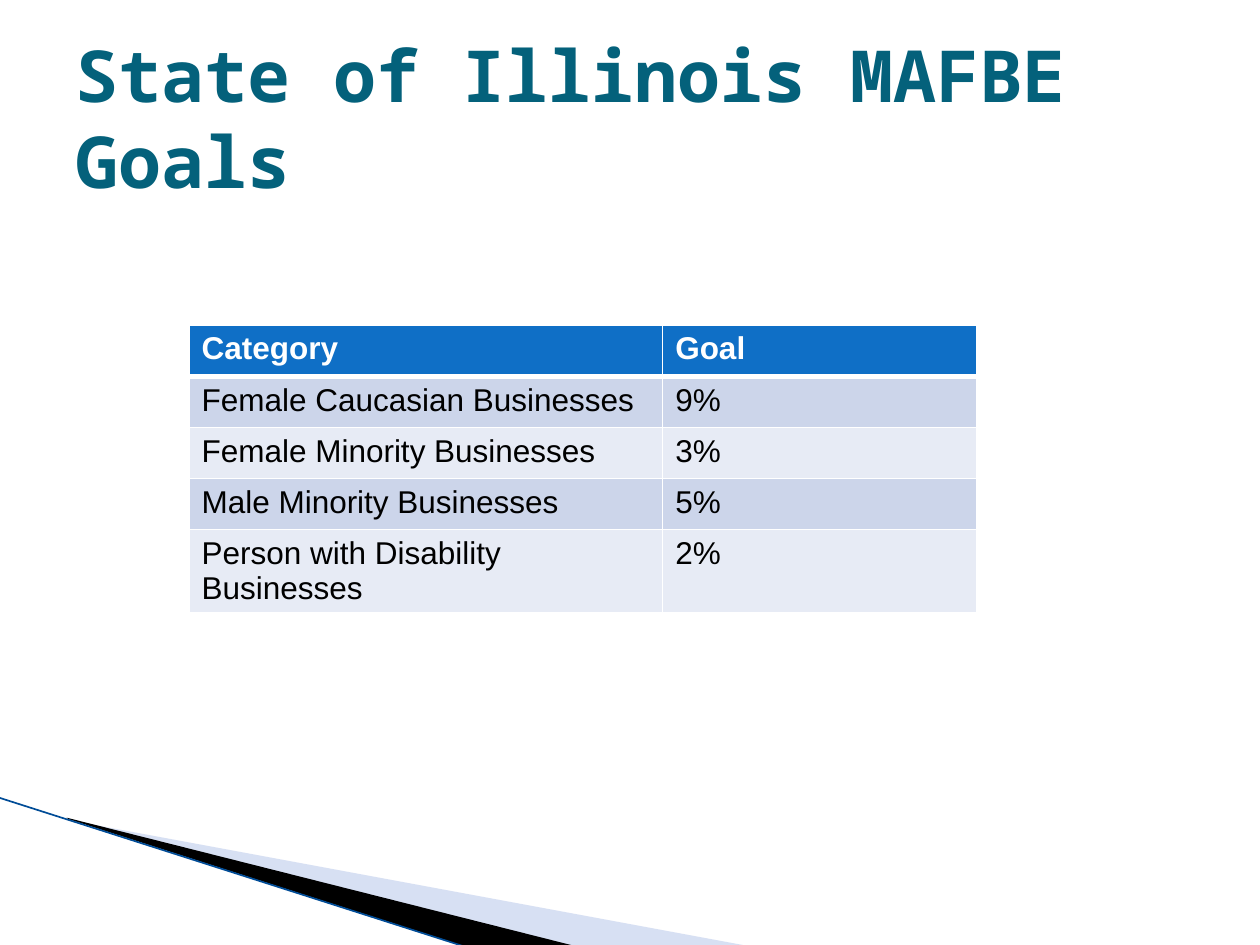
"""Build the State of Illinois MAFBE goals slide."""
from lxml import etree
from pptx import Presentation
from pptx import util as u
from pptx.dml.color import RGBColor
from pptx.enum import shapes, text
from pptx.oxml.ns import qn

TITLE = "State of Illinois MAFBE Goals"
ROWS = [
    ("Category", "Goal"),
    ("Female Caucasian Businesses", "9%"),
    ("Female Minority Businesses", "3%"),
    ("Male Minority Businesses", "5%"),
    ("Person with Disability Businesses", "2%"),
]
COL_WIDTHS = (3.76, 2.49)
TABLE_HEIGHT = 2.03
COLORS = {
    "title": "04617B", "header": "0F6FC6", "odd": "CCD5EA", "even": "E7EBF5",
    "white": "FFFFFF", "black": "000000", "wedge": "9DB2E1", "edge": "004C97",
}
WEDGES = [
    ([(0.55, 6.51), (5.95, 7.51), (4.56, 7.51), (0.55, 6.5)], "wedge", 40),
    ([(0.53, 6.49), (4.57, 7.51), (3.72, 7.52), (0.54, 6.5)], "black", 100),
]
EDGE = [(-0.01, 6.33), (3.71, 7.52)]


def rgb(name):
    return RGBColor.from_string(COLORS[name])


def write(tf, content, *, font="Arial", size=18, color="black", bold=False):
    p = tf.paragraphs[0]
    r = p.add_run()
    r.text = content
    r.font.name, r.font.size, r.font.bold = font, u.Pt(size), bold
    r.font.color.rgb = rgb(color)


def add_wedge(s, points, color, opacity):
    corners = [(u.Inches(x), u.Inches(y)) for x, y in points]
    builder = s.shapes.build_freeform(*corners[0])
    builder.add_line_segments(corners[1:], close=True)
    sp = builder.convert_to_shape()
    sp.shadow.inherit = False
    sp.fill.solid()
    sp.fill.fore_color.rgb = rgb(color)
    sp.line.fill.background()
    if opacity < 100:
        clr = sp.fill._xPr.find(qn("a:solidFill"))[0]
        etree.SubElement(clr, qn("a:alpha"), val=str(opacity * 1000))


def add_edge(s):
    ends = [u.Inches(v) for point in EDGE for v in point]
    line = s.shapes.add_connector(shapes.MSO_CONNECTOR.STRAIGHT, *ends)
    line.line.color.rgb = rgb("edge")
    line.line.width = u.Pt(0.95)
    etree.SubElement(line._element.spPr, qn("a:effectLst"))


def set_border(cell, side, width):
    ln = etree.SubElement(cell._tc.get_or_add_tcPr(), qn(f"a:ln{side}"), w=str(u.Pt(width)))
    fill = etree.SubElement(ln, qn("a:solidFill"))
    etree.SubElement(fill, qn("a:srgbClr"), val=COLORS["white"])


def add_goals(s):
    table = s.shapes.add_table(
        len(ROWS), len(COL_WIDTHS), u.Inches(1.5), u.Inches(2.58),
        u.Inches(sum(COL_WIDTHS)), u.Inches(TABLE_HEIGHT)).table
    for column, width in zip(table.columns, COL_WIDTHS):
        column.width = u.Inches(width)
    for i, row in enumerate(ROWS):
        header = i == 0
        fill = "header" if header else "odd" if i % 2 else "even"
        for j, content in enumerate(row):
            cell = table.cell(i, j)
            write(cell.text_frame, content, bold=header,
                  color="white" if header else "black")
            for side in "LRTB":
                thick = (header and side == "B") or (i == 1 and side == "T")
                set_border(cell, side, 3 if thick else 1)
            cell.fill.solid()
            cell.fill.fore_color.rgb = rgb(fill)


def add_title(s):
    box = s.shapes.add_textbox(u.Inches(0.5), u.Inches(0.3), u.Inches(9), u.Inches(1.25))
    tf = box.text_frame
    tf.word_wrap = True
    tf.vertical_anchor = text.MSO_ANCHOR.MIDDLE
    write(tf, TITLE, font="Noto Sans Mono", size=41, color="title", bold=True)


def main():
    prs = Presentation()
    prs.slide_width, prs.slide_height = u.Inches(10), u.Inches(7.5)
    s = prs.slides.add_slide(prs.slide_layouts[6])
    for wedge in WEDGES:
        add_wedge(s, *wedge)
    add_edge(s)
    add_goals(s)
    add_title(s)
    prs.save("out.pptx")


if __name__ == "__main__":
    main()
